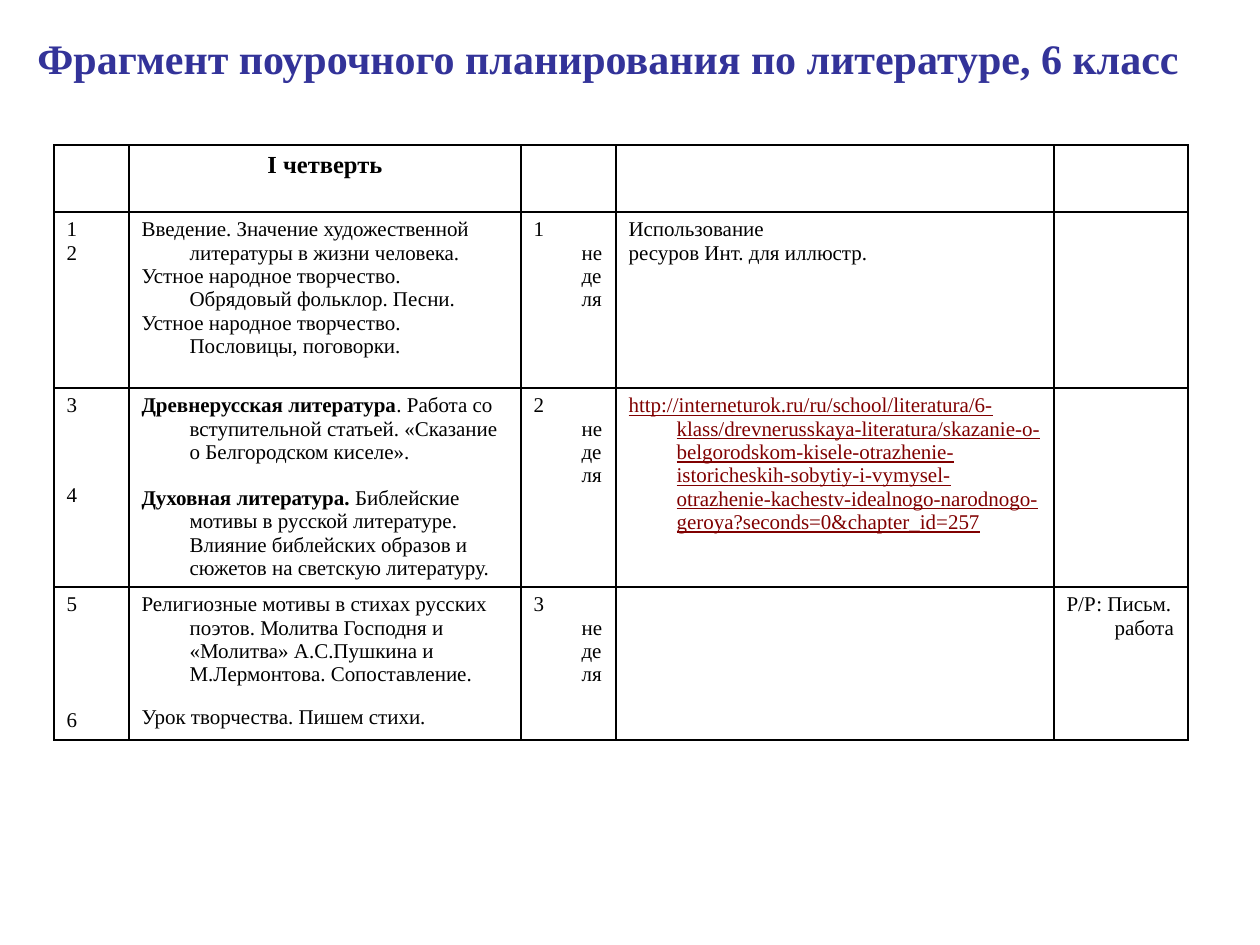
from dataclasses import dataclass

from lxml import etree
from pptx import Presentation
from pptx.dml.color import RGBColor
from pptx.enum.text import PP_ALIGN
from pptx.oxml.ns import qn
from pptx.util import Emu, Pt

PX = 914400 // 126
FONT = "Times New Roman"
BLACK, NAVY, MAROON = "000000", "333399", "800000"
LEFT, CENTER = PP_ALIGN.LEFT, PP_ALIGN.CENTER

TABLE_LEFT, TABLE_TOP = 54, 145
COL_WIDTHS = [75, 392, 95, 438, 134]
ROW_HEIGHTS = [67, 176, 199, 153]
HANGING = 48


@dataclass
class Para:
    text: str
    lead: str = ""  # bold opening words
    before: int = 0
    size: int = 12
    bold: bool = False
    color: str = BLACK
    underline: bool = False
    align: PP_ALIGN = LEFT


URL = ("http://interneturok.ru/ru/school/literatura/6-klass/"
       "drevnerusskaya-literatura/skazanie-o-belgorodskom-kisele-otrazhenie-"
       "istoricheskih-sobytiy-i-vymysel-otrazhenie-kachestv-idealnogo-"
       "narodnogo-geroya?seconds=0&chapter_id=257")

ROWS: list[list[list[Para]]] = [
    [[], [Para("I четверть", size=14, bold=True, align=CENTER)], [], [], []],
    [
        [Para("1"), Para("2")],
        [Para("Введение. Значение художественной литературы в жизни человека."),
         Para("Устное народное творчество. Обрядовый фольклор. Песни."),
         Para("Устное народное творчество. Пословицы, поговорки.")],
        [Para("1 неделя")],
        [Para("Использование"), Para("ресуров Инт. для иллюстр.")],
        [],
    ],
    [
        [Para("3"), Para("4", before=38)],
        [Para(". Работа со вступительной статьей. «Сказание о Белгородском киселе».",
              lead="Древнерусская литература"),
         Para(" Библейские мотивы в русской литературе. Влияние библейских "
              "образов и сюжетов на светскую литературу.",
              lead="Духовная литература.", before=13)],
        [Para("2 неделя")],
        [Para(URL, color=MAROON, underline=True)],
        [],
    ],
    [
        [Para("5"), Para("6", before=53)],
        [Para("Религиозные мотивы в стихах русских поэтов. Молитва Господня и "
              "«Молитва» А.С.Пушкина и М.Лермонтова. Сопоставление."),
         Para("Урок творчества. Пишем стихи.", before=11)],
        [Para("3 неделя")],
        [],
        [Para("Р/Р: Письм. работа")],
    ],
]


def px(n: int) -> Emu:
    return Emu(n * PX)


def rgb(color: str) -> RGBColor:
    return RGBColor.from_string(color)


def write_para(p, para: Para, hanging: int = 0) -> None:
    if hanging:
        pPr = p._p.get_or_add_pPr()
        pPr.set("marL", str(px(hanging)))
        pPr.set("indent", str(-px(hanging)))
    p.alignment = para.align
    if para.before:
        p.space_before = Pt(para.before)
    f = p.font
    f.name, f.size, f.bold = FONT, Pt(para.size), para.bold
    f.underline = para.underline
    f.color.rgb = rgb(para.color)
    if para.lead:
        r = p.add_run()
        r.text = para.lead
        r.font.bold = True
    p.add_run().text = para.text


def set_borders(cell) -> None:
    """Draw a 1 pt black line on each side; lines must precede the fill."""
    tcPr = cell._tc.get_or_add_tcPr()
    for i, side in enumerate(("a:lnL", "a:lnR", "a:lnT", "a:lnB")):
        ln = etree.Element(qn(side), w=str(Pt(1)))
        fill = etree.SubElement(ln, qn("a:solidFill"))
        etree.SubElement(fill, qn("a:srgbClr"), val=BLACK)
        tcPr.insert(i, ln)


def fill_cell(cell, paras: list[Para]) -> None:
    cell.fill.background()
    set_borders(cell)
    tf = cell.text_frame
    for i, para in enumerate(paras):
        p = tf.add_paragraph() if i else tf.paragraphs[0]
        write_para(p, para, HANGING)


def add_plan(s) -> None:
    table = s.shapes.add_table(
        len(ROW_HEIGHTS), len(COL_WIDTHS), px(TABLE_LEFT), px(TABLE_TOP),
        px(sum(COL_WIDTHS)), px(sum(ROW_HEIGHTS))).table
    table.first_row = table.horz_banding = False
    for col, width in zip(table.columns, COL_WIDTHS):
        col.width = px(width)
    for row, height, contents in zip(table.rows, ROW_HEIGHTS, ROWS):
        row.height = px(height)
        for cell, paras in zip(row.cells, contents):
            fill_cell(cell, paras)


def add_title(s) -> None:
    tf = s.shapes.add_textbox(px(25), px(26), px(1182), px(63)).text_frame
    tf.word_wrap = True
    write_para(tf.paragraphs[0], Para(
        "Фрагмент поурочного планирования по литературе, 6 класс",
        size=24, bold=True, color=NAVY))


def main() -> None:
    prs = Presentation()
    prs.slide_width, prs.slide_height = px(1260), px(945)
    s = prs.slides.add_slide(prs.slide_layouts[6])
    add_plan(s)
    add_title(s)
    prs.save("out.pptx")


if __name__ == "__main__":
    main()
